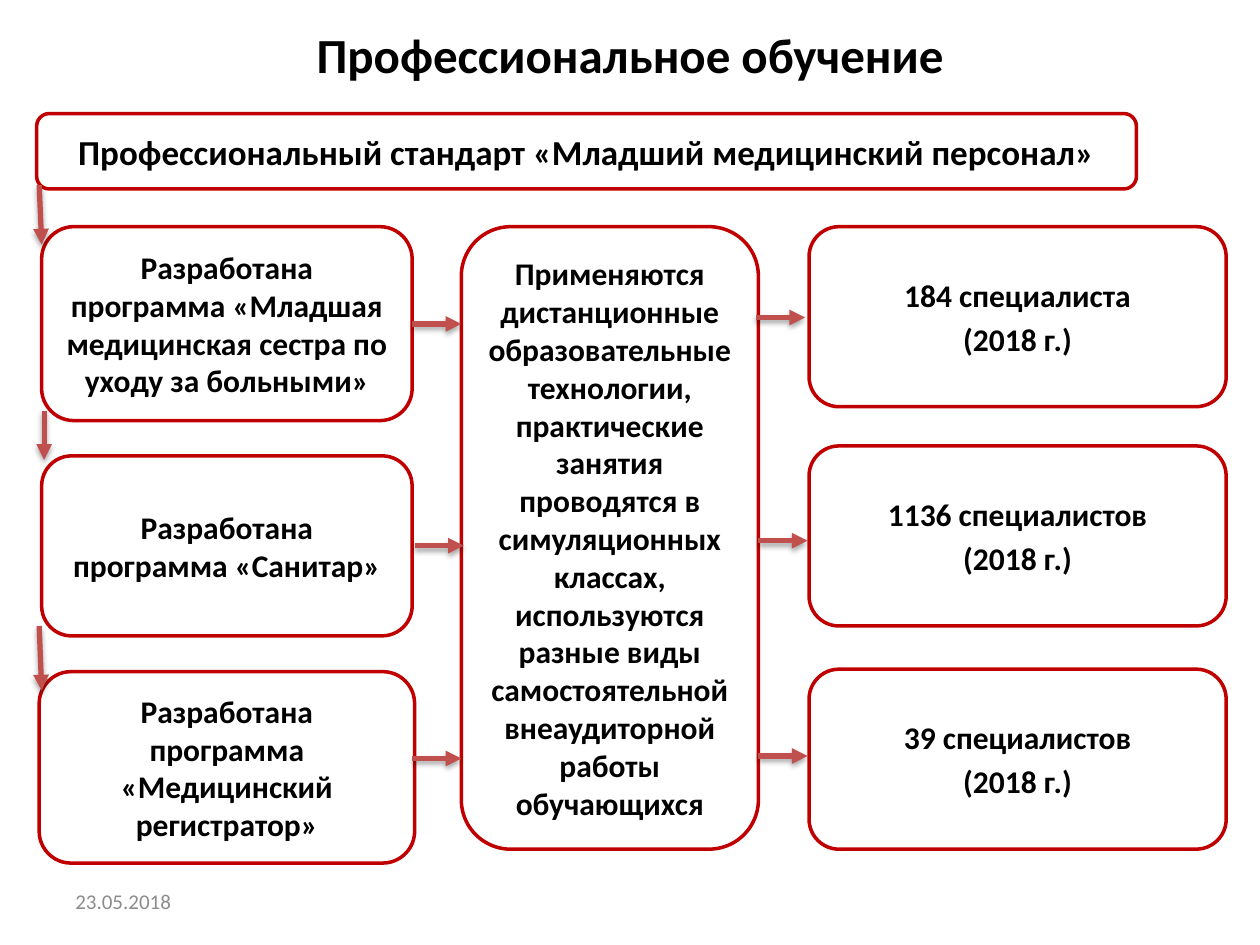
from lxml.etree import SubElement
from pptx import Presentation
from pptx.dml.color import RGBColor
from pptx.enum.shapes import MSO_CONNECTOR, MSO_SHAPE
from pptx.enum.text import MSO_ANCHOR, PP_ALIGN
from pptx.oxml.ns import qn
from pptx.util import Cm, Pt

PROGRAMS = [
    (0.84, 4.57, 7.47, 3.91, "Разработана программа «Младшая медицинская сестра по уходу за больными»"),
    (0.84, 9.19, 7.47, 3.63, "Разработана программа «Санитар»"),
    (0.79, 13.54, 7.57, 3.86, "Разработана программа «Медицинский регистратор»"),
]
METHODS = (
    "Применяются дистанционные образовательные технологии, практические занятия "
    "проводятся в симуляционных классах, используются разные виды самостоятельной "
    "внеаудиторной работы обучающихся"
)
RESULTS = [(4.57, "184 специалиста"), (8.99, "1136 специалистов"), (13.49, "39 специалистов")]
TO_METHODS = [(8.31, 6.53), (8.36, 11), (8.31, 15.29)]
TO_RESULTS = [(15.24, 6.4), (15.29, 10.9), (15.29, 15.24)]
DOWNWARD = [(0.79, 3.73, 0.84, 4.93), (0.89, 8.28, 0.89, 9.27), (0.79, 12.62, 0.84, 13.92)]
ARROW_LENGTH = 0.99


def color(hex_value):
    """Turn a hex string into a colour."""
    return RGBColor.from_string(hex_value)


def style(paragraph, size, hex_value="000000", bold=True, align=PP_ALIGN.CENTER):
    """Format a paragraph and its runs."""
    paragraph.alignment = align
    for run in paragraph.runs:
        run.font.name = "Calibri"
        run.font.size = Pt(size)
        run.font.bold = bold
        run.font.color.rgb = color(hex_value)


def place_title(slide, left, top, width, height):
    """Fill and position the title placeholder."""
    title = slide.shapes.title
    title.left, title.top, title.width, title.height = map(Cm, (left, top, width, height))
    title.text_frame.text = "Профессиональное обучение"
    title.text_frame.vertical_anchor = MSO_ANCHOR.MIDDLE
    style(title.text_frame.paragraphs[0], 28)


def place_date(slide, left, top, width, height):
    """Add the date at the foot of the slide."""
    date = slide.shapes.add_textbox(*map(Cm, (left, top, width, height)))
    date.text_frame.word_wrap = True
    date.text_frame.vertical_anchor = MSO_ANCHOR.MIDDLE
    date.text_frame.text = "23.05.2018"
    style(date.text_frame.paragraphs[0], 12, "8C8C8C", False, PP_ALIGN.LEFT)


def place_card(slide, left, top, width, height, lines, size=18, margin=0.25):
    """Add a rounded card with centred lines of text."""
    card = slide.shapes.add_shape(MSO_SHAPE.ROUNDED_RECTANGLE, *map(Cm, (left, top, width, height)))
    card.shadow.inherit = False
    card.fill.solid()
    card.fill.fore_color.rgb = color("FFFFFF")
    card.line.color.rgb = color("C00000")
    card.line.width = Pt(2)
    frame = card.text_frame
    frame.word_wrap = True
    frame.vertical_anchor = MSO_ANCHOR.MIDDLE
    frame.margin_left = frame.margin_right = Cm(margin)
    frame.text = "\n".join(lines)
    for index, paragraph in enumerate(frame.paragraphs):
        style(paragraph, size)
        if index:
            paragraph.space_before = Pt(0.2 * size)


def place_arrow(slide, x1, y1, x2, y2):
    """Add a red arrow with a soft shadow below it."""
    arrow = slide.shapes.add_connector(MSO_CONNECTOR.STRAIGHT, *map(Cm, (x1, y1, x2, y2)))
    arrow.line.color.rgb = color("C0504D")
    arrow.line.width = Pt(3)
    SubElement(arrow.line._get_or_add_ln(), qn("a:tailEnd"), type="triangle")
    effects = SubElement(arrow._element.spPr, qn("a:effectLst"))
    shadow = SubElement(
        effects, qn("a:outerShdw"), blurRad=str(Pt(3.1)), dist=str(Pt(1.8)), dir="5400000", rotWithShape="0"
    )
    shade = SubElement(shadow, qn("a:srgbClr"), val="000000")
    SubElement(shade, qn("a:alpha"), val="35000")


def main():
    """Build the slide and save it."""
    deck = Presentation()
    deck.slide_width, deck.slide_height = Cm(25.4), Cm(19.05)
    slide = deck.slides.add_slide(deck.slide_layouts[5])
    place_title(slide, 1.27, 0.56, 22.86, 1.07)
    place_date(slide, 1.27, 17.65, 5.92, 1.02)
    place_card(slide, 0.74, 2.29, 22.17, 1.52, ["Профессиональный стандарт «Младший медицинский персонал»"], 20)
    for left, top, width, height, program in PROGRAMS:
        place_card(slide, left, top, width, height, [program])
    for top, trained in RESULTS:
        place_card(slide, 16.31, top, 8.41, 3.63, [trained, "(2018 г.)"])
    place_card(slide, 9.3, 4.57, 5.99, 12.55, [METHODS], margin=0.2)
    for x, y in TO_METHODS + TO_RESULTS:
        place_arrow(slide, x, y, x + ARROW_LENGTH, y)
    for ends in DOWNWARD:
        place_arrow(slide, *ends)
    deck.save("out.pptx")


if __name__ == "__main__":
    main()
